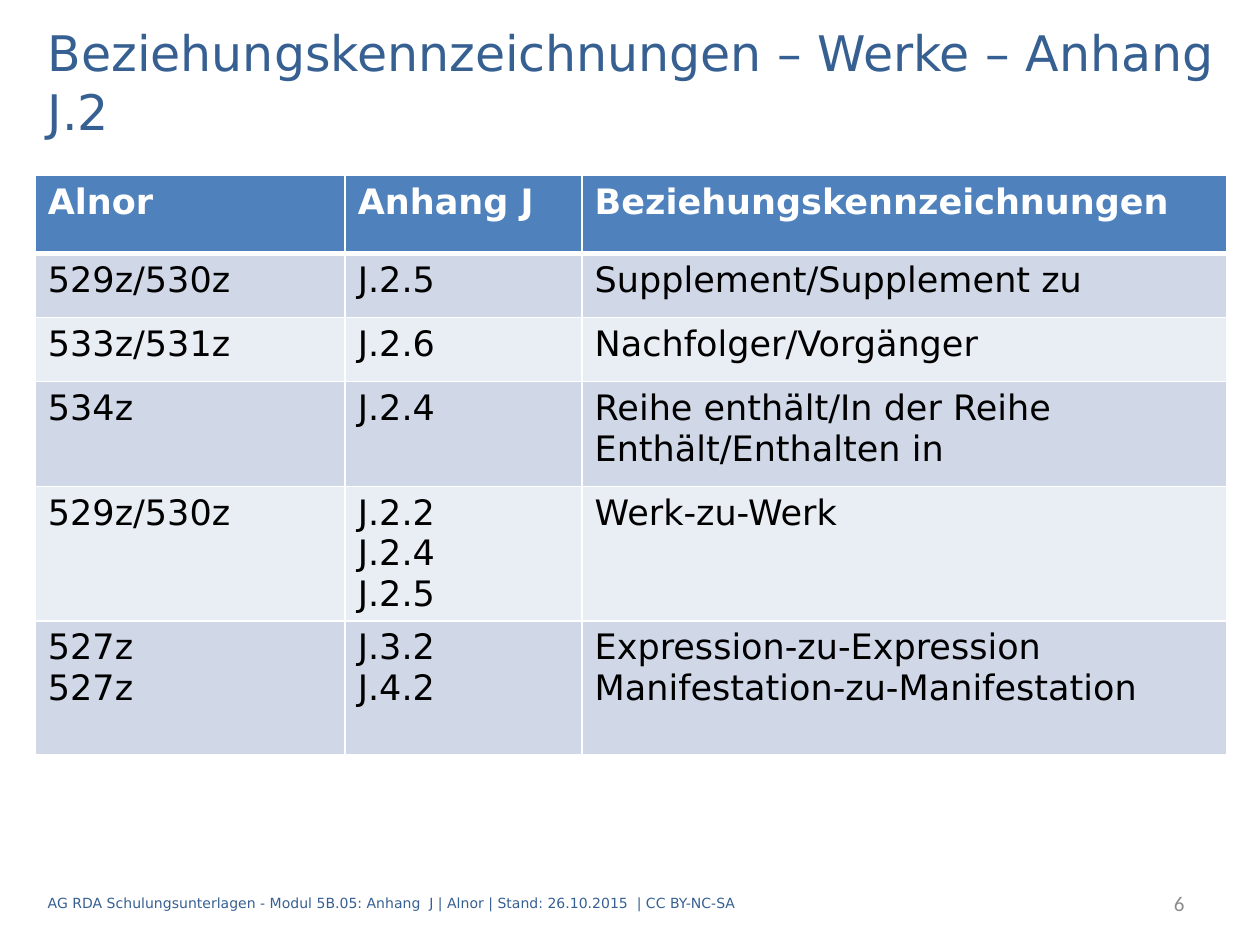
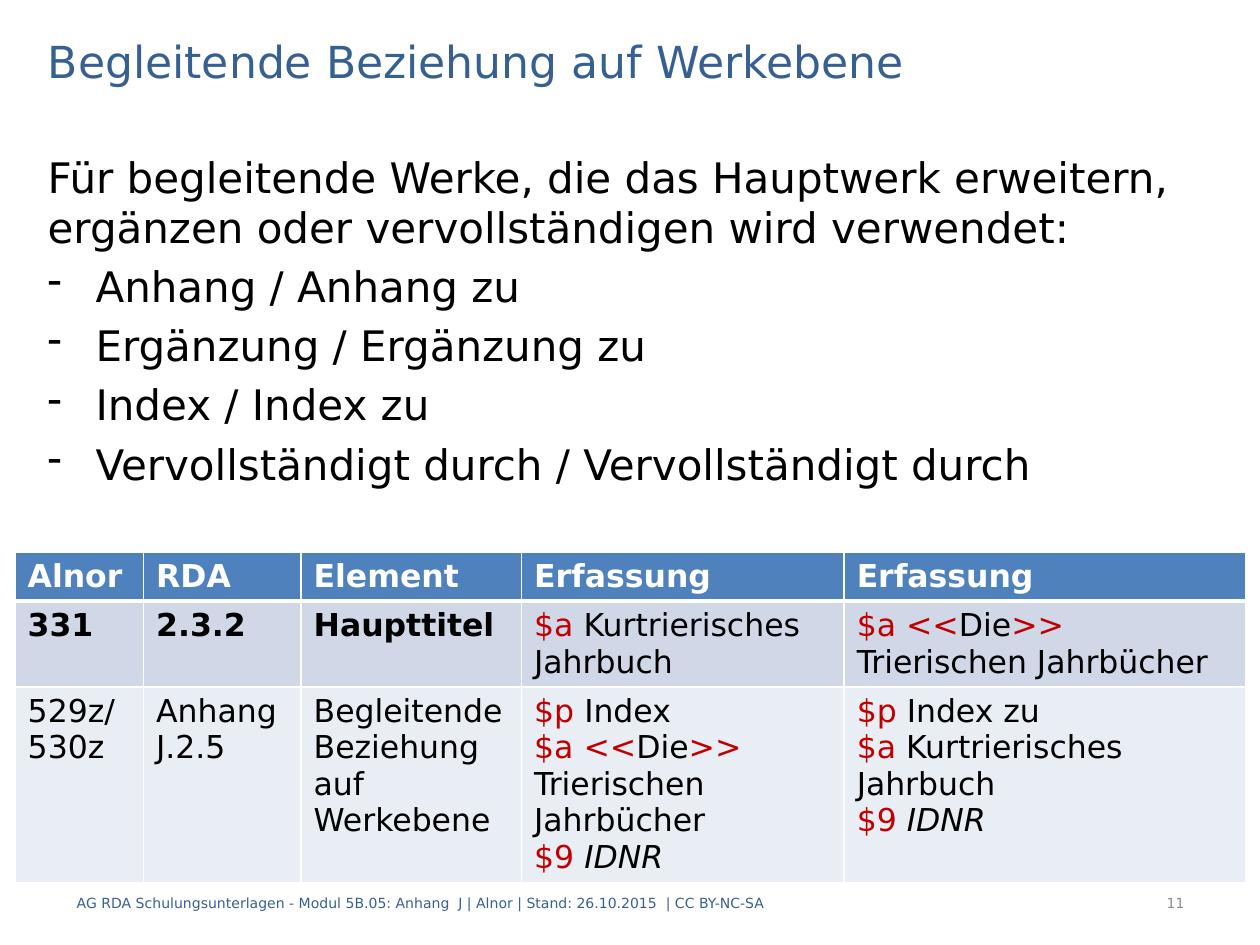
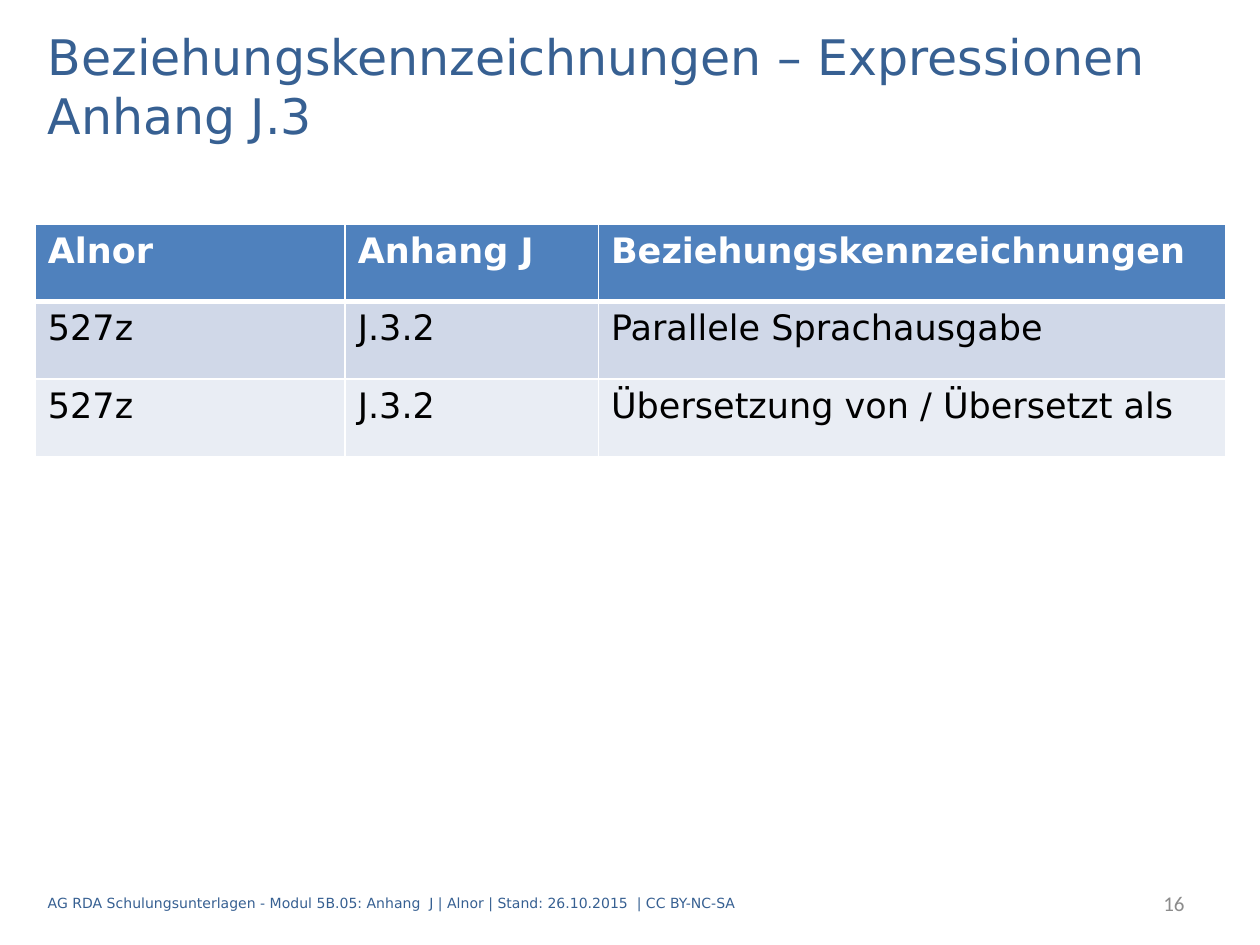
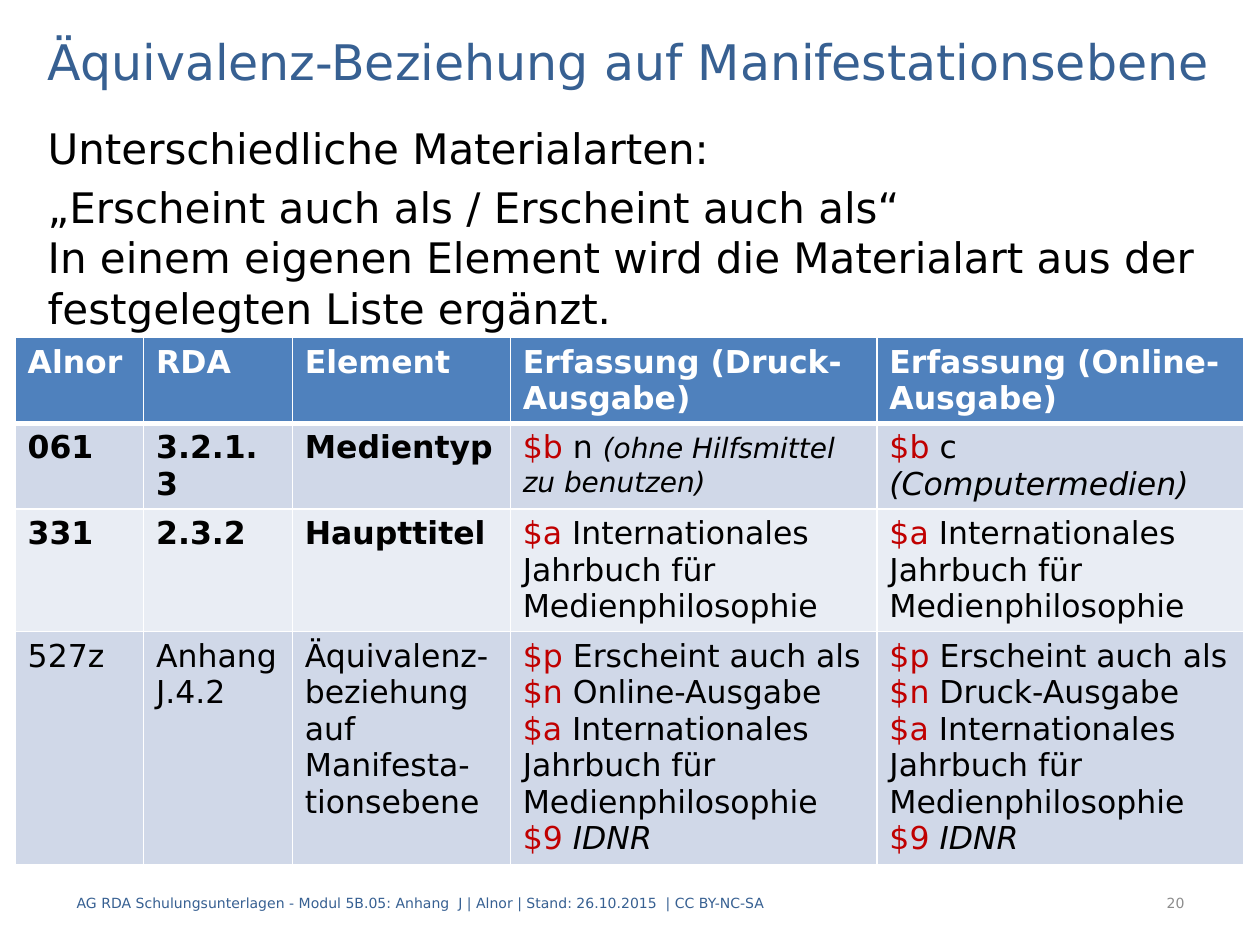
from dataclasses import dataclass

from lxml import etree
from pptx import Presentation
from pptx.dml.color import RGBColor
from pptx.enum.text import MSO_ANCHOR, MSO_AUTO_SIZE, PP_ALIGN
from pptx.oxml.ns import qn
from pptx.util import Inches, Pt

MIDDLE, TOP = MSO_ANCHOR.MIDDLE, MSO_ANCHOR.TOP
LEFT, RIGHT = PP_ALIGN.LEFT, PP_ALIGN.RIGHT
NO_AUTOFIT = MSO_AUTO_SIZE.NONE
TITLE_ONLY = 5
GRID_COLUMNS, GRID_ROWS = 100, 75


@dataclass(frozen=True)
class Theme:
    font: str = "DejaVu Sans"
    number_font: str = "Calibri"
    title: str = "376092"
    text: str = "000000"
    code: str = "C00000"
    number: str = "8C8C8C"
    header: str = "4F81BD"
    white: str = "FFFFFF"
    bands: tuple = ("D0D8E8", "E9EDF4")
    title_size: float = 28
    body_size: float = 24
    overview_size: float = 20
    example_size: float = 18
    remark_size: float = 16
    number_size: float = 12
    footer_size: float = 8
    paragraph_gap: float = 5
    bullet_indent: float = 3.8


FOOTER = ("AG RDA Schulungsunterlagen - Modul 5B.05: Anhang  J | Alnor | "
          "Stand: 26.10.2015  | CC BY-NC-SA")


class Deck:
    def __init__(self, theme):
        self.theme = theme
        self.presentation = Presentation()
        self.presentation.slide_width = Inches(10)
        self.presentation.slide_height = Inches(7.5)
        self.slide = None
        # Cell text is split into runs at "|"; a leading mark sets the run's format.
        self.marks = {
            "!": {"color": theme.code},
            "*": {"bold": True},
            "_": {"italic": True},
            "~": {"italic": True, "size": theme.remark_size},
        }

    def columns(self, count):
        return round(self.presentation.slide_width * count / GRID_COLUMNS)

    def rows(self, count):
        return round(self.presentation.slide_height * count / GRID_ROWS)

    def box(self, left, top, width, height):
        return (self.columns(left), self.rows(top),
                self.columns(width), self.rows(height))

    def add_run(self, paragraph, text, **changes):
        values = {"name": self.theme.font, "size": self.theme.body_size,
                  "bold": False, "italic": False,
                  "color": self.theme.text, **changes}
        run = paragraph.add_run()
        run.text = text
        run.font.color.rgb = RGBColor.from_string(values.pop("color"))
        values["size"] = Pt(values["size"])
        for name, value in values.items():
            setattr(run.font, name, value)

    def format_frame(self, frame, anchor):
        settings = {"word_wrap": True, "auto_size": NO_AUTOFIT,
                    "vertical_anchor": anchor}
        for name, value in settings.items():
            setattr(frame, name, value)

    def add_title(self, text, top, height, size=None):
        self.slide = self.presentation.slides.add_slide(
            self.presentation.slide_layouts[TITLE_ONLY])
        title = self.slide.shapes.title
        sides = ("left", "top", "width", "height")
        for side, value in zip(sides, self.box(2.8, top, 94.5, height)):
            setattr(title, side, value)
        self.format_frame(title.text_frame, MIDDLE)
        paragraph = title.text_frame.paragraphs[0]
        paragraph.alignment = LEFT
        self.add_run(paragraph, text, size=size or self.theme.title_size,
                     color=self.theme.title)

    def add_frame(self, box, anchor):
        frame = self.slide.shapes.add_textbox(*self.box(*box)).text_frame
        self.format_frame(frame, anchor)
        return frame

    def add_label(self, box, text, align, **changes):
        paragraph = self.add_frame(box, MIDDLE).paragraphs[0]
        paragraph.alignment = align
        self.add_run(paragraph, text, **changes)

    def add_footer(self, left, width, number, **number_format):
        small = {"size": self.theme.footer_size}
        self.add_label((left, 69.7, width, 4), FOOTER, LEFT,
                       color=self.theme.title, **small)
        self.add_label((79.1, 69.7, 15.9, 4), str(number), RIGHT,
                       color=self.theme.number, **{**small, **number_format})

    def add_body(self, top, paragraphs, bullets=()):
        frame = self.add_frame((2.8, top, 94.5, 59.8), TOP)
        for index, text in enumerate([*paragraphs, *bullets]):
            paragraph = frame.paragraphs[0] if index == 0 else frame.add_paragraph()
            paragraph.space_before = Pt(self.theme.paragraph_gap)
            if index >= len(paragraphs):
                self.add_dash(paragraph)
            for line_number, line in enumerate(text.split("\n")):
                if line_number:
                    paragraph.add_line_break()
                self.add_run(paragraph, line)

    def add_dash(self, paragraph):
        properties = paragraph._p.get_or_add_pPr()
        indent = self.columns(self.theme.bullet_indent)
        properties.set("marL", str(indent))
        properties.set("indent", str(-indent))
        etree.SubElement(properties, qn("a:buChar"), char="-")

    def add_table(self, left, top, widths, heights, rows, size):
        """Fill a table whose first row is the header and whose others are banded."""
        box = self.box(left, top, sum(widths), sum(heights))
        table = self.slide.shapes.add_table(len(rows), len(widths), *box).table
        for column, width in zip(table.columns, widths):
            column.width = self.columns(width)
        for row, height in zip(table.rows, heights):
            row.height = self.rows(height)
        for row_index, texts in enumerate(rows):
            for column_index, text in enumerate(texts):
                cell = table.cell(row_index, column_index)
                self.fill_cell(cell, text, row_index, size)

    def fill_cell(self, cell, text, row_index, size):
        is_header = row_index == 0
        self.add_borders(cell, is_header)
        cell.fill.solid()
        band = self.theme.bands[(row_index - 1) % 2]
        cell.fill.fore_color.rgb = RGBColor.from_string(
            self.theme.header if is_header else band)
        base = {"size": size}
        if is_header:
            base.update(bold=True, color=self.theme.white)
        frame = cell.text_frame
        for index, line in enumerate(text.split("\n")):
            paragraph = frame.paragraphs[0] if index == 0 else frame.add_paragraph()
            for part in line.split("|"):
                mark = self.marks.get(part[0], {})
                self.add_run(paragraph, part[1:] if mark else part,
                             **{**base, **mark})

    def add_borders(self, cell, is_header):
        """Draw white rules; each row's lower rule serves as the next row's upper."""
        properties = cell._tc.get_or_add_tcPr()
        weights = {"L": 1, "R": 1, "T": 1, "B": 3} if is_header else {"L": 1, "R": 1, "B": 1}
        for side, weight in weights.items():
            line = etree.SubElement(properties, qn(f"a:ln{side}"), w=str(Pt(weight)))
            fill = etree.SubElement(line, qn("a:solidFill"))
            etree.SubElement(fill, qn("a:srgbClr"), val=self.theme.white)

    def add_overview(self, top, widths, heights, rows):
        header = ("Alnor", "Anhang J", "Beziehungskennzeichnungen")
        self.add_table(2.8, top, widths, heights, [header, *rows],
                       self.theme.overview_size)

    def add_example(self, top, widths, heights, captures, rows):
        header = ("Alnor", "RDA", "Element", *captures)
        self.add_table(1.2, top, widths, heights, [header, *rows],
                       self.theme.example_size)


def main():
    theme = Theme()
    deck = Deck(theme)
    large_number = {"name": theme.number_font, "size": theme.number_size}
    id_number = "!$9 |_IDNR"

    deck.add_title("Beziehungskennzeichnungen – Werke – Anhang J.2", 2.1, 8.7)
    deck.add_footer(2.8, 74.8, 6, **large_number)
    deck.add_overview(13.9, (24.6, 18.8, 51.2), (6.2, 5.1, 5.1, 8.3, 10.6, 10.6), [
        ("529z/530z", "J.2.5", "Supplement/Supplement zu"),
        ("533z/531z", "J.2.6", "Nachfolger/Vorgänger"),
        ("534z", "J.2.4", "Reihe enthält/In der Reihe\nEnthält/Enthalten in"),
        ("529z/530z", "J.2.2\nJ.2.4\nJ.2.5", "Werk-zu-Werk"),
        ("527z\n527z", "J.3.2\nJ.4.2",
         "Expression-zu-Expression\nManifestation-zu-Manifestation"),
    ])

    yearbook = "!$a |Kurtrierisches Jahrbuch"
    other_yearbook = "!$a <<|Die|!>> |Trierischen Jahrbücher"
    deck.add_title("Begleitende Beziehung auf Werkebene", 2, 5.6, size=25.2)
    deck.add_body(11.5, [
        "Für begleitende Werke, die das Hauptwerk erweitern, "
        "ergänzen oder vervollständigen wird verwendet:",
    ], bullets=[
        "Anhang / Anhang zu",
        "Ergänzung / Ergänzung zu",
        "Index / Index zu",
        "Vervollständigt durch / Vervollständigt durch",
    ])
    deck.add_footer(5.1, 73.2, 11)
    deck.add_example(43.8, (10.2, 12.5, 17.5, 25.6, 31.9), (3.8, 6.7, 15.4),
                     ("Erfassung", "Erfassung"), [
        ("*331", "*2.3.2", "*Haupttitel", yearbook, other_yearbook),
        ("529z/\n530z", "Anhang J.2.5", "Begleitende Beziehung auf Werkebene",
         f"!$p |Index\n{other_yearbook}\n{id_number}",
         f"!$p |Index zu\n{yearbook}\n{id_number}"),
    ])

    deck.add_title("Beziehungskennzeichnungen – Expressionen Anhang J.3", 2, 9.5)
    deck.add_footer(2.8, 70.9, 16, **large_number)
    deck.add_overview(17.8, (24.6, 20.1, 49.8), [6.15] * 3, [
        ("527z", "J.3.2", "Parallele Sprachausgabe"),
        ("527z", "J.3.2", "Übersetzung von / Übersetzt als"),
    ])

    journal = "!$a |Internationales Jahrbuch für Medienphilosophie"
    print_link, online_link = (
        f"!$p |Erscheint auch als\n!$n |{edition}-Ausgabe\n{journal}\n{id_number}"
        for edition in ("Online", "Druck"))
    deck.add_title("Äquivalenz-Beziehung auf Manifestationsebene", 2, 5.6)
    deck.add_body(9.2, [
        "Unterschiedliche Materialarten:",
        "„Erscheint auch als / Erscheint auch als“\n"
        "In einem eigenen Element wird die Materialart aus der "
        "festgelegten Liste ergänzt.",
    ])
    deck.add_footer(5.1, 75.6, 20)
    deck.add_example(26.8, (10.2, 11.8, 17.3, 29.1, 29.1), (6.5, 6.5, 9.2, 18.5),
                     ("Erfassung (Druck-Ausgabe)", "Erfassung (Online-Ausgabe)"), [
        ("*061", "*3.2.1.3", "*Medientyp",
         "!$b |n |~(ohne Hilfsmittel zu benutzen)", "!$b |c |_(Computermedien)"),
        ("*331", "*2.3.2", "*Haupttitel", journal, journal),
        ("527z", "Anhang J.4.2", "Äquivalenz-beziehung auf Manifesta-tionsebene",
         print_link, online_link),
    ])

    deck.presentation.save("out.pptx")


if __name__ == "__main__":
    main()
